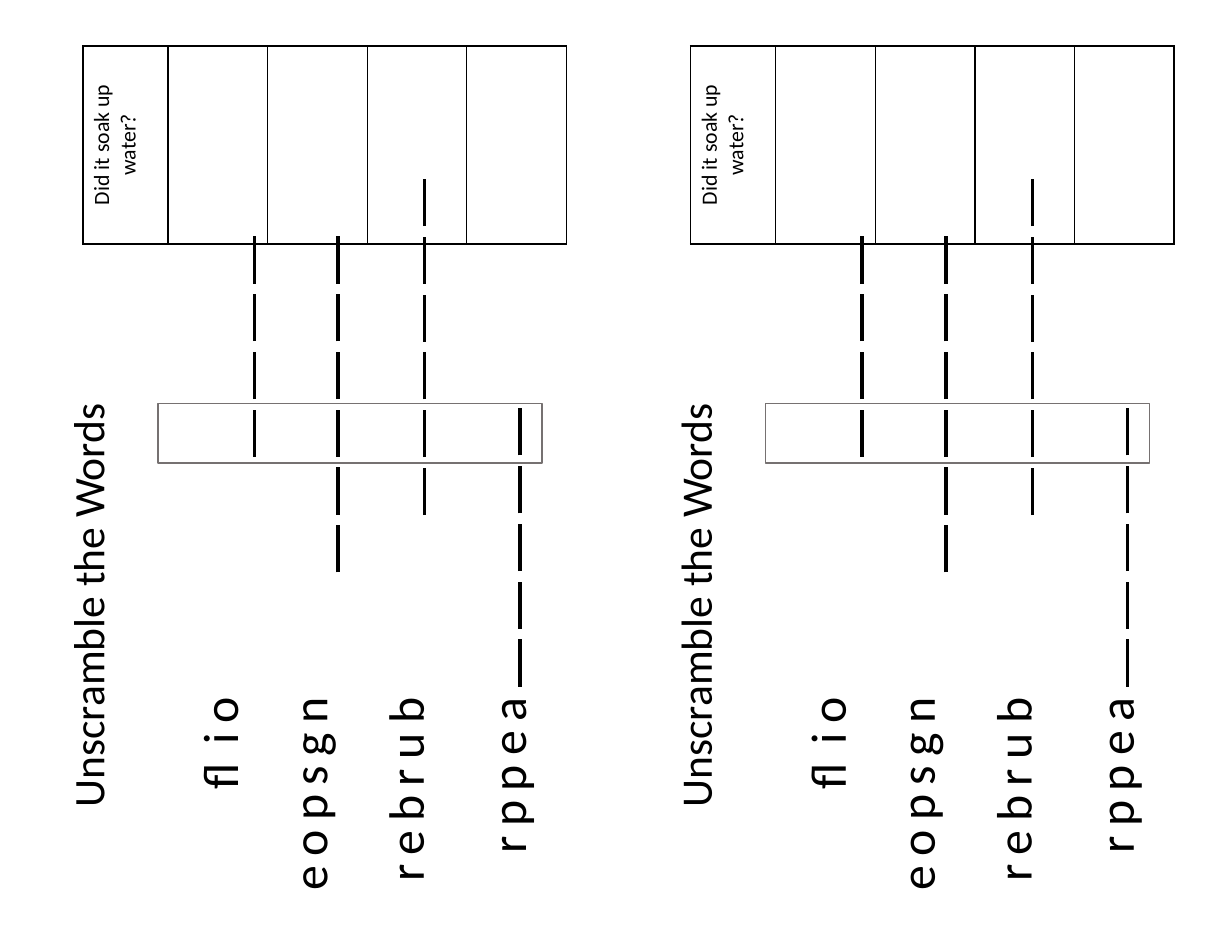
from lxml import etree
from pptx import Presentation
from pptx.dml.color import RGBColor as RGB
from pptx.enum.shapes import MSO_CONNECTOR as LINK, MSO_SHAPE as SHAPE
from pptx.enum.text import MSO_ANCHOR as ANCHOR, PP_ALIGN as ALIGN
from pptx.oxml.ns import qn
from pptx.util import Cm, Pt

INK = {"text": "000000", "frame": "767171"}
FONT = "Calibri"
TOP = 14.53
DASH, PITCH = 1.07, 1.31
WORDS = [("eopsgn", 5.09, 5.46), ("flio", 3.07, 4.93),
         ("rebrub", 7.28, 5.46), ("rppea", 9.6, 4.93)]
BLANKS = [(3.89, 9.32, 4), (5.79, 11.94, 6), (7.75, 10.64, 6), (9.91, TOP, 5)]


def style(para, text, size, align):
    """Write one paragraph in the worksheet font."""
    para.text = text
    para.alignment = align
    para.font.name = FONT
    para.font.size = Pt(size)
    para.font.color.rgb = RGB.from_string(INK["text"])


def center(x, y, wide, high):
    """Turn a centre and a size into left, top, width and height."""
    return Cm(x - wide / 2), Cm(y - high / 2), Cm(wide), Cm(high)


def label(shapes, place, text, size, align, gap=0):
    """Add text that reads upwards, with optional letter spacing."""
    box = shapes.add_textbox(*center(*place))
    box.rotation = 270
    box.text_frame.word_wrap = True
    para = box.text_frame.paragraphs[0]
    style(para, text, size, align)
    if gap:
        para.runs[0].font._element.set("spc", str(gap * 100))


def words(slide, x, y):
    """Add the scrambled words, all ending at one height."""
    group = slide.shapes.add_group_shape()
    for text, mid, wide in WORDS:
        place = x + mid, y + TOP + wide / 2, wide, 1.6
        label(group.shapes, place, text, 32, ALIGN.RIGHT, 6)


def blanks(slide, x, y):
    """Add the letter blanks and the frame across them."""
    group = slide.shapes.add_group_shape()
    for left, base, count in BLANKS:
        for i in range(count):
            low = y + base - i * PITCH
            line = group.shapes.add_connector(
                LINK.STRAIGHT, Cm(x + left), Cm(low), Cm(x + left), Cm(low - DASH))
            line.line.width = Pt(2.25)
            line.line.color.rgb = RGB.from_string(INK["text"])
            etree.SubElement(line._element.spPr, qn("a:effectLst"))
    frame = group.shapes.add_shape(
        SHAPE.RECTANGLE, *center(x + 6.06, y + 8.78, 1.35, 8.71))
    frame.rotation = 270
    frame.shadow.inherit = False
    frame.fill.background()
    frame.line.width = Pt(1)
    frame.line.color.rgb = RGB.from_string(INK["frame"])


def edge(cell):
    """Draw thin borders round a cell and leave it unfilled."""
    props = cell._tc.get_or_add_tcPr()
    for side in "LRTB":
        line = etree.SubElement(props, qn(f"a:ln{side}"), w=str(Pt(1)))
        fill = etree.SubElement(line, qn("a:solidFill"))
        etree.SubElement(fill, qn("a:srgbClr"), val=INK["text"])
    cell.fill.background()


def table(slide, x, y):
    """Add the one-row answer table."""
    cols = [1.93] + [2.26] * 4
    grid = slide.shapes.add_table(
        1, len(cols), Cm(x), Cm(y), Cm(sum(cols)), Cm(2.46)).table
    grid.first_row = grid.horz_banding = False
    for col, wide in zip(grid.columns, cols):
        col.width = Cm(wide)
    for cell in grid.iter_cells():
        edge(cell)
    head = grid.cell(0, 0)
    head.vertical_anchor = ANCHOR.BOTTOM
    head._tc.get_or_add_tcPr().set("vert", "vert270")
    style(head.text_frame.paragraphs[0], "Did it soak up water?", 14, ALIGN.CENTER)


def sheet(slide, x, y):
    """Add one worksheet with its top left corner at x, y."""
    words(slide, x, y)
    blanks(slide, x, y)
    label(slide.shapes, (x + 0.1, y + 12.69, 10.87, 1.45),
          "Unscramble the Words", 28, ALIGN.CENTER)
    table(slide, x, y)


def main():
    """Build the slide with two equal worksheets."""
    deck = Presentation()
    deck.slide_width, deck.slide_height = Cm(27.94), Cm(21.59)
    slide = deck.slides.add_slide(deck.slide_layouts[6])
    for i in range(2):
        sheet(slide, 1.88 + i * 13.78, 1.04)
    deck.save("out.pptx")


if __name__ == "__main__":
    main()
